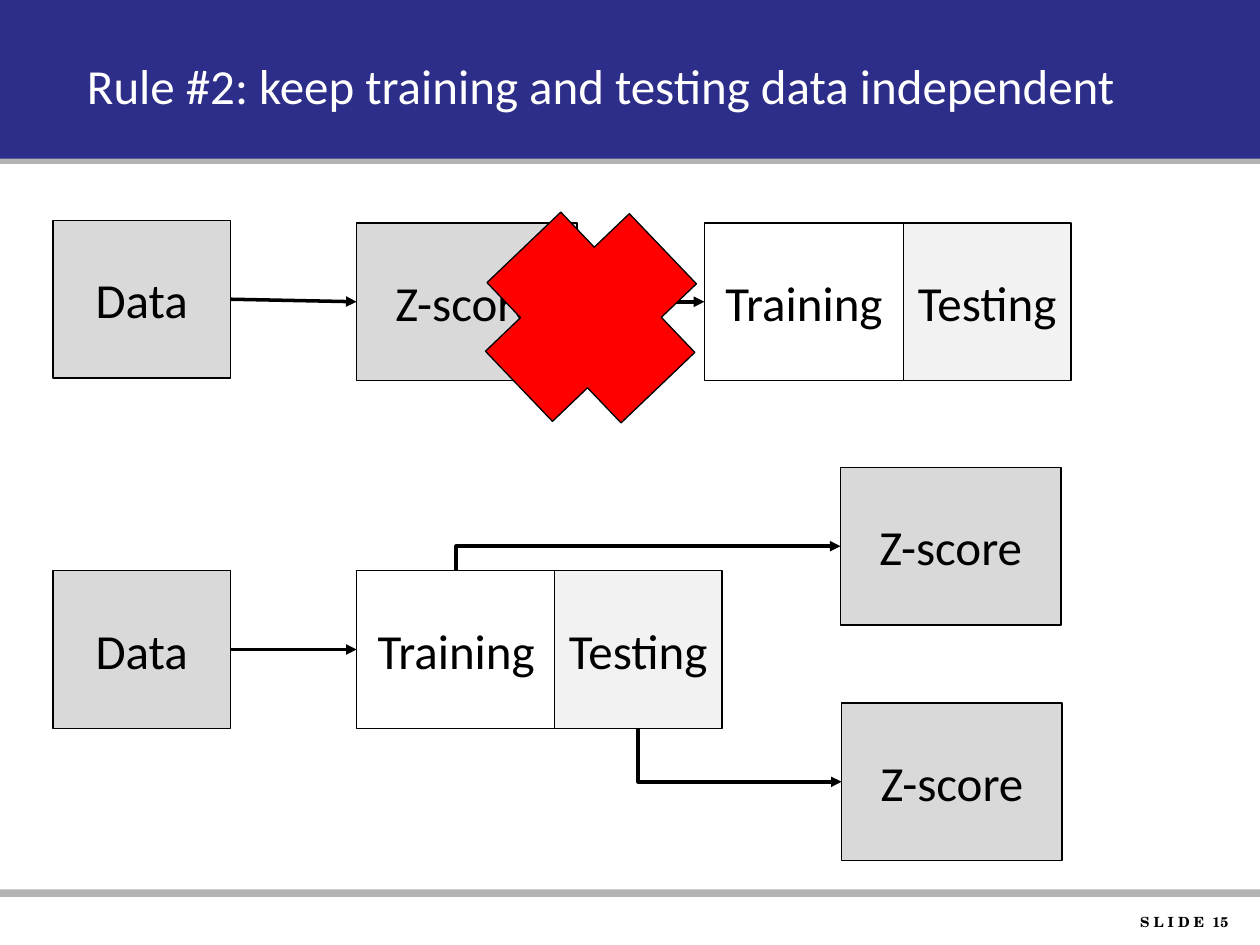
import lxml.etree
import pptx
import pptx.dml.color
import pptx.enum.shapes
import pptx.enum.text
import pptx.oxml.ns
import pptx.util

Inches, Pt = pptx.util.Inches, pptx.util.Pt
RGBColor = pptx.dml.color.RGBColor
MSO_SHAPE = pptx.enum.shapes.MSO_SHAPE
MSO_CONNECTOR = pptx.enum.shapes.MSO_CONNECTOR
PP_ALIGN = pptx.enum.text.PP_ALIGN
MSO_ANCHOR = pptx.enum.text.MSO_ANCHOR
qn = pptx.oxml.ns.qn

BLACK = RGBColor(0x00, 0x00, 0x00)
WHITE = RGBColor(0xFF, 0xFF, 0xFF)
NAVY = RGBColor(0x2D, 0x2D, 0x8A)
BAND_GRAY = RGBColor(0xB3, 0xB3, 0xB3)
BOX_GRAY = RGBColor(0xD9, 0xD9, 0xD9)
PALE_GRAY = RGBColor(0xF2, 0xF2, 0xF2)
RED = RGBColor(0xFF, 0x00, 0x00)


def write(s, text, size=28, font="Calibri", color=BLACK, bold=False,
          align=PP_ALIGN.CENTER, anchor=MSO_ANCHOR.MIDDLE):
    tf = s.text_frame
    tf.word_wrap = True
    tf.vertical_anchor = anchor
    p = tf.paragraphs[0]
    p.alignment = align
    r = p.add_run()
    r.text = text
    r.font.size, r.font.name, r.font.bold = Pt(size), font, bold
    r.font.color.rgb = color


def add_filled(kind, left, top, width, height, fill, outlined=True):
    s = shapes.add_shape(kind, Inches(left), Inches(top), Inches(width), Inches(height))
    s.shadow.inherit = False
    s.fill.solid()
    s.fill.fore_color.rgb = fill
    if outlined:
        s.line.color.rgb = BLACK
        s.line.width = Pt(0.75)
    else:
        s.line.fill.background()
    return s


prs = pptx.Presentation()
prs.slide_width, prs.slide_height = Inches(10), Inches(7.5)
slide = prs.slides.add_slide(prs.slide_layouts[5])
shapes = slide.shapes

# Header and footer bands, placed behind the title
title = shapes.title
for top, height, fill in [(1.05, 0.25, BAND_GRAY), (-0.01, 1.27, NAVY), (7.06, 0.06, BAND_GRAY)]:
    band = add_filled(MSO_SHAPE.RECTANGLE, 0, top, 10, height, fill, outlined=False)
    title._element.addprevious(band._element)

title.left, title.top, title.width, title.height = (Inches(v) for v in (0.59, 0.17, 8.9, 1))
write(title, "Rule #2: keep training and testing data independent",
      color=WHITE, align=PP_ALIGN.LEFT)

footer = shapes.add_textbox(Inches(8.43), Inches(7.2), Inches(1.42), Inches(0.23))
write(footer, "S L I D E  15", size=8, font="TeX Gyre Schola", bold=True,
      align=PP_ALIGN.RIGHT, anchor=MSO_ANCHOR.TOP)

# Process boxes: name -> label, left, top
BOX_HEIGHT = 1.25
STYLES = {"Data": (1.41, BOX_GRAY), "Z-score": (1.75, BOX_GRAY),
          "Training": (1.58, WHITE), "Testing": (1.33, PALE_GRAY)}
LAYOUT = {
    "wrong data": ("Data", 0.42, 1.75),
    "wrong score": ("Z-score", 2.83, 1.77),
    "wrong training": ("Training", 5.59, 1.77),
    "wrong testing": ("Testing", 7.17, 1.77),
    "data": ("Data", 0.42, 4.53),
    "training": ("Training", 2.83, 4.53),
    "testing": ("Testing", 4.4, 4.53),
    "training score": ("Z-score", 6.67, 3.71),
    "testing score": ("Z-score", 6.68, 5.58),
}
boxes = {}
for name, (label, left, top) in LAYOUT.items():
    width, fill = STYLES[label]
    boxes[name] = add_filled(MSO_SHAPE.RECTANGLE, left, top, width, BOX_HEIGHT, fill)
    write(boxes[name], label)

# Straight arrows from right side to left side
arrows = []
for start, end in [("wrong data", "wrong score"), ("wrong score", "wrong training"),
                   ("data", "training")]:
    arrow = shapes.add_connector(MSO_CONNECTOR.STRAIGHT, 0, 0, 0, 0)
    arrow.begin_connect(boxes[start], 3)
    arrow.end_connect(boxes[end], 1)
    arrows.append(arrow)

# Elbow arrows: vertical first, then right; the unrotated frame shares its centre
for start, end, rotation, flip_v in [("training", "training score", 90, True),
                                     ("testing", "testing score", 270, False)]:
    source, target = boxes[start], boxes[end]
    x1 = source.left + source.width // 2
    y1 = source.top if flip_v else source.top + source.height
    x2, y2 = target.left, target.top + target.height // 2
    run, rise = abs(x2 - x1), abs(y2 - y1)
    left, top = (x1 + x2 - rise) // 2, (y1 + y2 - run) // 2
    y_ends = (top + run, top) if flip_v else (top, top + run)
    arrow = shapes.add_connector(MSO_CONNECTOR.ELBOW, left + rise, y_ends[0], left, y_ends[1])
    sp_pr = arrow._element.spPr
    sp_pr.find(qn("a:xfrm")).set("rot", str(rotation * 60000))
    sp_pr.find(qn("a:prstGeom")).set("prst", "bentConnector2")
    arrows.append(arrow)

for arrow in arrows:
    arrow.line.color.rgb = BLACK
    arrow.line.width = Pt(2)
    sp_pr = arrow._element.spPr
    lxml.etree.SubElement(sp_pr.find(qn("a:ln")), qn("a:tailEnd"), type="triangle")
    lxml.etree.SubElement(sp_pr, qn("a:effectLst"))

# Cross over the wrong pipeline
cross = add_filled(MSO_SHAPE.CROSS, 3.9, 1.75, 1.58, 1.54, RED)
cross.rotation = 316.3

prs.save("out.pptx")
